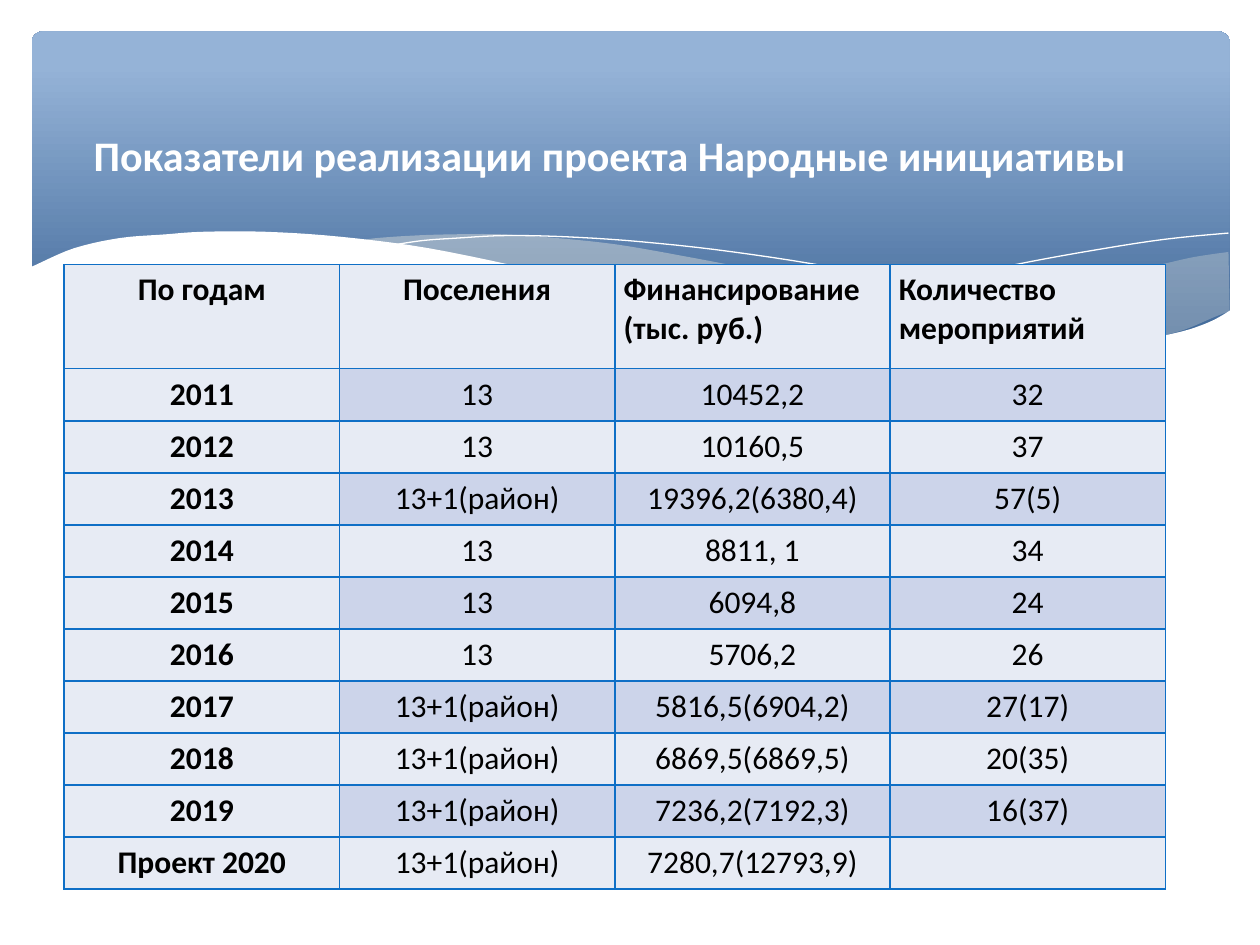
from lxml import etree
from pptx import Presentation
from pptx.dml.color import RGBColor
from pptx.enum.shapes import MSO_SHAPE
from pptx.enum.text import MSO_ANCHOR, PP_ALIGN
from pptx.oxml.ns import qn
from pptx.util import Inches, Pt

ROUNDED = MSO_SHAPE.ROUNDED_RECTANGLE
MIDDLE = MSO_ANCHOR.MIDDLE
CENTER, JUSTIFY = PP_ALIGN.CENTER, PP_ALIGN.JUSTIFY

FONT = "Calibri"
COLORS = {
    "white": "FFFFFF", "text": "000000", "border": "0F6FC6",
    "band_dark": "376092", "band_light": "95B3D7", "swell": "EEECE1",
    "pale": "E7EBF4", "stripe": "CCD4EA",
}
SLIDE_WIDTH, SLIDE_HEIGHT = Inches(10), Inches(7.5)

# Wave outlines, on a grid of 951 columns by 270 rows laid over the header band
GRID_COLUMNS, GRID_ROWS = 951, 270
RIGHT_SWELL = [
    [(950, 175), (923, 179), (896, 185), (851, 195), (780, 212), (728, 223),
     (681, 232), (636, 240)],
    [(636, 240), (666, 244), (694, 247), (720, 249), (756, 252), (789, 253),
     (819, 252), (847, 250), (872, 247), (896, 242), (917, 236), (938, 227), (951, 222)],
]
MIDDLE_SWELL = [
    [(261, 166), (274, 164), (303, 162), (336, 161), (374, 161), (417, 164),
     (464, 169), (516, 178), (573, 189), (604, 197), (681, 215), (750, 229),
     (812, 240), (868, 248)],
    [(868, 248), (851, 250), (823, 252), (782, 253), (736, 250), (684, 245),
     (625, 236), (559, 223), (505, 215), (424, 197), (379, 186), (337, 178),
     (298, 171), (261, 166)],
]
LEFT_LINE = [[(284, 170), (310, 166), (338, 164), (376, 162), (425, 163), (485, 167),
              (557, 175), (640, 188), (735, 208), (806, 226), (882, 246)]]
RIGHT_LINE = [[(588, 232), (647, 216), (723, 198), (781, 185), (841, 174),
               (899, 165), (950, 160)]]
WHITE_WAVE = [
    [(-2, 188), (4, 185), (34, 172), (70, 164), (107, 161), (136, 159), (186, 159),
     (246, 163), (315, 172), (393, 188), (422, 195), (504, 214), (578, 229),
     (643, 240), (701, 247), (753, 251), (798, 252), (850, 249), (905, 240),
     (934, 231), (952, 221)],
    [(952, 304), (-2, 304)],
]

TITLE = "Показатели реализации проекта Народные инициативы"
HEADER = ["По годам", "Поселения", "Финансирование (тыс. руб.)", "Количество мероприятий"]
ROWS = [
    ["2011", "13", "10452,2", "32"],
    ["2012", "13", "10160,5", "37"],
    ["2013", "13+1(район)", "19396,2(6380,4)", "57(5)"],
    ["2014", "13", "8811, 1", "34"],
    ["2015", "13", "6094,8", "24"],
    ["2016", "13", "5706,2", "26"],
    ["2017", "13+1(район)", "5816,5(6904,2)", "27(17)"],
    ["2018", "13+1(район)", "6869,5(6869,5)", "20(35)"],
    ["2019", "13+1(район)", "7236,2(7192,3)", "16(37)"],
    ["Проект 2020", "13+1(район)", "7280,7(12793,9)", ""],
]


def color(name):
    return RGBColor.from_string(COLORS[name])


def slide_box(left, top, width, height):
    """Turn shares of the slide's size, in percent, into lengths."""
    return [round(share * side / 100) for share, side in
            zip((left, top, width, height), (SLIDE_WIDTH, SLIDE_HEIGHT) * 2)]


def smooth(points, steps=5):
    """Return points on a Catmull-Rom curve through the given ones."""
    padded = [points[0], *points, points[-1]]
    curve = []
    for a, b, c, d in zip(padded, padded[1:], padded[2:], padded[3:]):
        for step in range(steps):
            t = step / steps
            curve.append(tuple(
                q + t * (r - p) / 2 + t**2 * (2 * p - 5 * q + 4 * r - s) / 2
                + t**3 * (3 * q - p - 3 * r + s) / 2
                for p, q, r, s in zip(a, b, c, d)))
    return curve + [points[-1]]


def set_font(paragraph, size, color_name, bold):
    font = paragraph.font
    font.name, font.size, font.bold = FONT, Pt(size), bold
    font.color.rgb = color(color_name)


def add_wave(slide, box, curves, closed, color_name, opacity=100):
    left, top, width, height = box
    points = [(round(left + x * width / GRID_COLUMNS), round(top + y * height / GRID_ROWS))
              for curve in curves for x, y in smooth(curve)]
    builder = slide.shapes.build_freeform(*points[0])
    builder.add_line_segments(points[1:], close=closed)
    shape = builder.convert_to_shape()
    shape.shadow.inherit = False
    if not closed:
        shape.fill.background()
        shape.line.color.rgb = color(color_name)
        shape.line.width = Pt(0.75)
        return
    shape.line.fill.background()
    shape.fill.solid()
    shape.fill.fore_color.rgb = color(color_name)
    if opacity < 100:
        tint = shape.fill._xPr.find(qn("a:solidFill"))[0]
        etree.SubElement(tint, qn("a:alpha"), val=str(opacity * 1000))


def add_header_band(slide, box):
    band = slide.shapes.add_shape(ROUNDED, *box)
    band.adjustments[0] = 0.034
    band.shadow.inherit = False
    band.line.fill.background()
    band.fill.gradient()
    band.fill.gradient_angle = 90
    stops = zip(band.fill.gradient_stops, (0, 0.9), ("band_dark", "band_light"))
    for stop, position, name in stops:
        stop.position = position
        stop.color.rgb = color(name)
    add_wave(slide, box, RIGHT_SWELL, True, "swell", 29)
    add_wave(slide, box, MIDDLE_SWELL, True, "swell", 40)
    add_wave(slide, box, LEFT_LINE, False, "white")
    add_wave(slide, box, RIGHT_LINE, False, "white")
    add_wave(slide, box, WHITE_WAVE, True, "white")


def add_title(slide, box):
    frame = slide.shapes.add_textbox(*box).text_frame
    frame.word_wrap = True
    frame.vertical_anchor = MIDDLE
    paragraph = frame.paragraphs[0]
    paragraph.text = TITLE
    paragraph.alignment = CENTER
    set_font(paragraph, 24, "white", True)


def add_borders(cell):
    properties = cell._tc.get_or_add_tcPr()
    for index, side in enumerate(("lnL", "lnR", "lnT", "lnB")):
        line = etree.Element(qn(f"a:{side}"), w=str(Pt(0.96)))
        fill = etree.SubElement(line, qn("a:solidFill"))
        etree.SubElement(fill, qn("a:srgbClr"), val=COLORS["border"])
        properties.insert(index, line)


def add_indicator_table(slide, box):
    """Add the table; the heading row is twice as high as the others."""
    data = [HEADER, *ROWS]
    table = slide.shapes.add_table(len(data), len(HEADER), *box).table
    unit = box[3] // (len(data) + 1)
    for index, row in enumerate(table.rows):
        row.height = unit if index else 2 * unit
    for row, texts in enumerate(data):
        for column, text in enumerate(texts):
            cell = table.cell(row, column)
            cell.margin_left = cell.margin_right = Inches(0.07)
            cell.margin_top = cell.margin_bottom = Inches(0.05)
            cell.fill.solid()
            striped = row % 2 and column
            cell.fill.fore_color.rgb = color("stripe" if striped else "pale")
            add_borders(cell)
            paragraph = cell.text_frame.paragraphs[0]
            paragraph.text = text
            paragraph.alignment = JUSTIFY if row == 0 and column > 1 else CENTER
            set_font(paragraph, 18, "text", row == 0 or column == 0)


def main():
    presentation = Presentation()
    presentation.slide_width, presentation.slide_height = SLIDE_WIDTH, SLIDE_HEIGHT
    slide = presentation.slides.add_slide(presentation.slide_layouts[6])
    add_header_band(slide, slide_box(2.5, 3.33, 95.1, 36))
    add_indicator_table(slide, slide_box(5.1, 28, 87.4, 66.13))
    add_title(slide, slide_box(3.5, 10.13, 89.8, 12.53))
    presentation.save("out.pptx")


if __name__ == "__main__":
    main()
